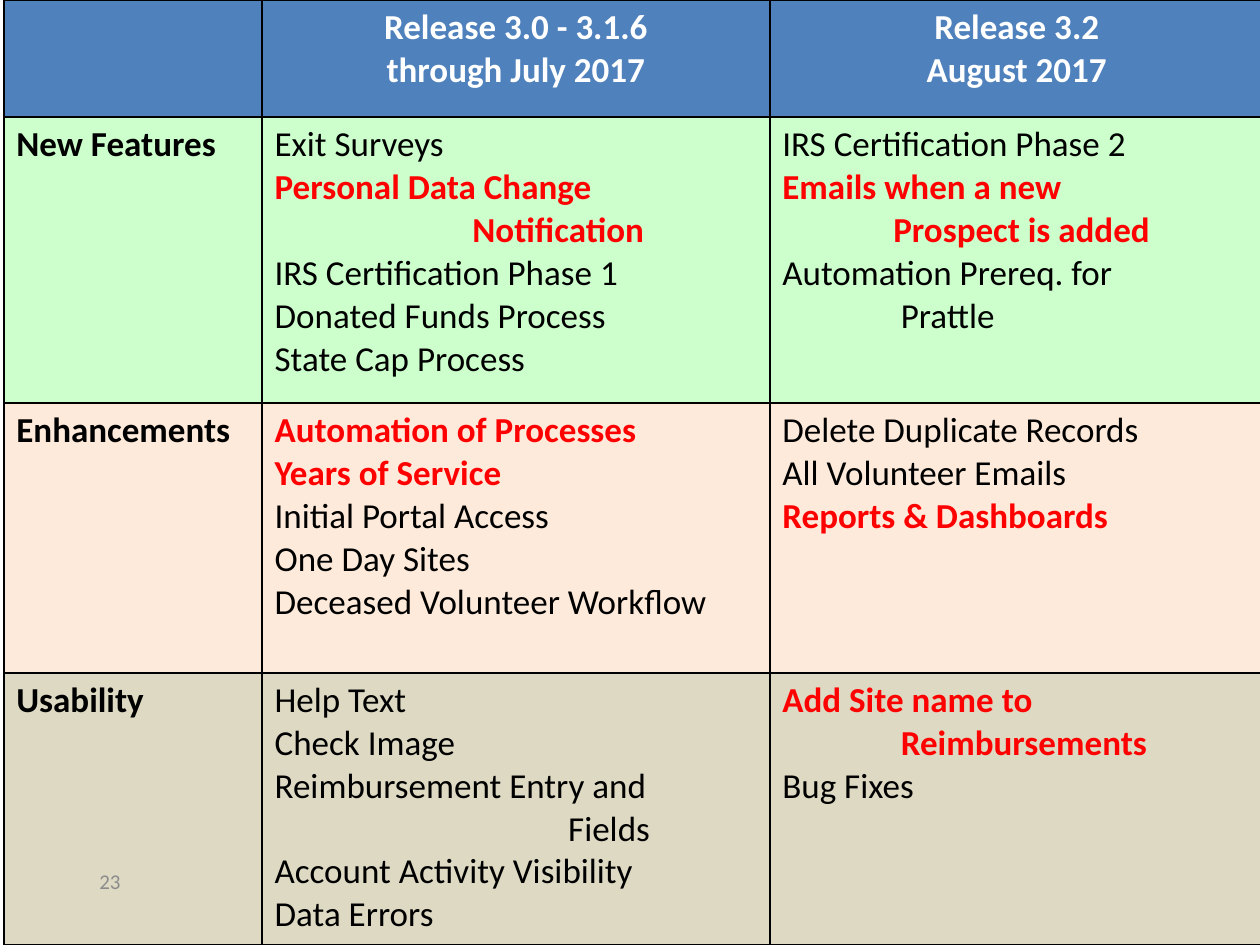
from dataclasses import dataclass

from lxml import etree
from pptx import Presentation
from pptx import util as u
from pptx.dml.color import RGBColor
from pptx.enum import text
from pptx.oxml import ns

COLORS = {
    "header": "4F81BD", "features": "CCFFCC", "enhancements": "FDEADA",
    "usability": "DDD9C3", "white": "FFFFFF", "black": "000000",
    "red": "FF0000", "gray": "8C8C8C",
}
COLUMN_WIDTHS = (2.05, 4.03, 3.92)


@dataclass(frozen=True)
class Line:
    words: str
    color: str = "black"
    bold: bool = False
    indent: float = 0
    align: text.PP_ALIGN = text.PP_ALIGN.LEFT


@dataclass(frozen=True)
class Row:
    height: float
    fill: str
    cells: tuple[list[Line], ...]


def heading(words: str) -> Line:
    return Line(words, "white", True, align=text.PP_ALIGN.CENTER)


def label(words: str) -> Line:
    return Line(words, bold=True)


def key(words: str, indent: float = 0) -> Line:
    return Line(words, "red", True, indent)


ROWS = (
    Row(0.93, "header", (
        [],
        [heading("Release 3.0 - 3.1.6"), heading("through July 2017")],
        [heading("Release 3.2"), heading("August 2017")],
    )),
    Row(2.27, "features", (
        [label("New Features")],
        [Line("Exit Surveys"), key("Personal Data Change"), key("Notification", 1.57),
         Line("IRS Certification Phase 1"), Line("Donated Funds Process"),
         Line("State Cap Process")],
        [Line("IRS Certification Phase 2"), key("Emails when a new"),
         key("Prospect is added", 0.88), Line("Automation Prereq. for"),
         Line("Prattle", indent=0.94)],
    )),
    Row(2.14, "enhancements", (
        [label("Enhancements")],
        [key("Automation of Processes"), key("Years of Service"),
         Line("Initial Portal Access"), Line("One Day Sites"),
         Line("Deceased Volunteer Workflow")],
        [Line("Delete Duplicate Records"), Line("All Volunteer Emails"),
         key("Reports & Dashboards")],
    )),
    Row(2.16, "usability", (
        [label("Usability")],
        [Line("Help Text"), Line("Check Image"), Line("Reimbursement Entry and"),
         Line("Fields", indent=2.33), Line("Account Activity Visibility"),
         Line("Data Errors")],
        [key("Add Site name to"), key("Reimbursements", 0.94), Line("Bug Fixes")],
    )),
)


def rgb(name: str) -> RGBColor:
    return RGBColor.from_string(COLORS[name])


def write_text(para, words: str, *, size: float = 20, color: str = "black",
               bold: bool = False, indent: float = 0,
               align: text.PP_ALIGN = text.PP_ALIGN.LEFT) -> None:
    para.alignment = align
    if indent:
        para._p.get_or_add_pPr().set("marL", str(u.Inches(indent)))
    span = para.add_run()
    span.text = words
    span.font.name = "Calibri"
    span.font.size = u.Pt(size)
    span.font.bold = bold
    span.font.color.rgb = rgb(color)


def add_borders(cell) -> None:
    properties = cell._tc.get_or_add_tcPr()
    for side in ("lnL", "lnR", "lnT", "lnB"):
        border = etree.SubElement(properties, ns.qn(f"a:{side}"), w=str(u.Pt(1)))
        fill = etree.SubElement(border, ns.qn("a:solidFill"))
        etree.SubElement(fill, ns.qn("a:srgbClr"), val=COLORS["black"])


def fill_cell(cell, lines: list[Line], fill: str) -> None:
    add_borders(cell)
    cell.fill.solid()
    cell.fill.fore_color.rgb = rgb(fill)
    frame = cell.text_frame
    for index, line in enumerate(lines):
        para = frame.add_paragraph() if index else frame.paragraphs[0]
        write_text(para, line.words, color=line.color, bold=line.bold,
                   indent=line.indent, align=line.align)


def add_release_table(page) -> None:
    table = page.shapes.add_table(
        len(ROWS), len(COLUMN_WIDTHS), u.Inches(0.03), u.Inches(0),
        u.Inches(10), u.Inches(7.5)).table
    table.first_row = False
    table.horz_banding = False
    for column, width in zip(table.columns, COLUMN_WIDTHS):
        column.width = u.Inches(width)
    for table_row, row in zip(table.rows, ROWS):
        table_row.height = u.Inches(row.height)
        for cell, lines in zip(table_row.cells, row.cells):
            fill_cell(cell, lines, row.fill)


def add_page_number(page, number: str) -> None:
    box = page.shapes.add_textbox(
        u.Inches(0.69), u.Inches(6.79), u.Inches(0.7), u.Inches(0.4))
    frame = box.text_frame
    frame.word_wrap = True
    frame.vertical_anchor = text.MSO_ANCHOR.MIDDLE
    write_text(frame.paragraphs[0], number, size=12, color="gray")


def main() -> None:
    """Build the release summary slide."""
    deck = Presentation()
    deck.slide_width = u.Inches(10)
    deck.slide_height = u.Inches(7.5)
    page = deck.slides.add_slide(deck.slide_layouts[6])
    add_release_table(page)
    add_page_number(page, "23")
    deck.save("out.pptx")


if __name__ == "__main__":
    main()
